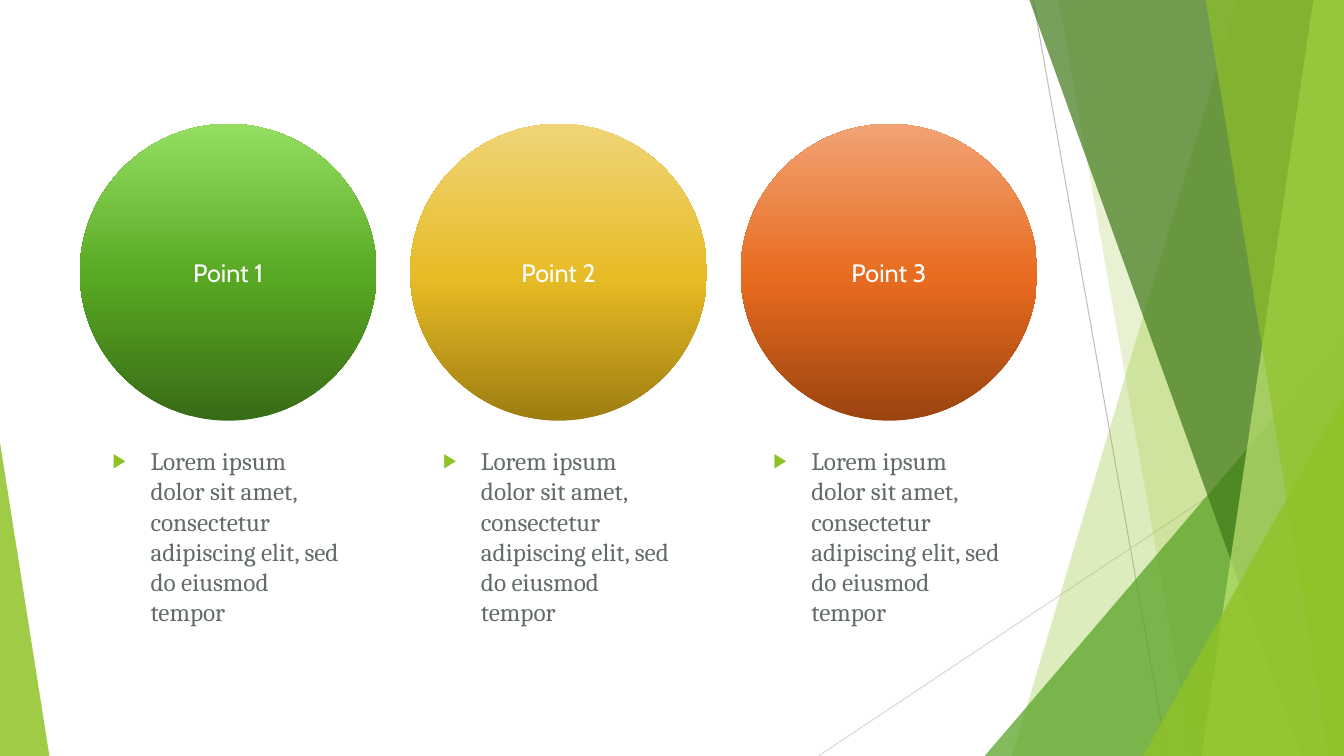
from copy import deepcopy
from dataclasses import dataclass
from pptx import Presentation
from pptx.dml.color import RGBColor
from pptx.enum.shapes import MSO_CONNECTOR, MSO_SHAPE
from pptx.enum.text import MSO_ANCHOR, MSO_AUTO_SIZE, PP_ALIGN
from pptx.oxml.ns import qn
from pptx.oxml.xmlchemy import OxmlElement
from pptx.util import Pt


@dataclass(frozen=True)
class Theme:
    lime: str = "90C226"
    pale: str = "C0E474"
    green: str = "54A021"
    forest: str = "3F7819"
    white: str = "FFFFFF"
    text: str = "646B6B"
    label_font: str = "Cabin"
    body_font: str = "Cambria"
    size: int = 18


THEME = Theme()
WIDTH, HEIGHT = 960, 540
LOREM = "Lorem ipsum dolor sit amet, consectetur adipiscing elit, sed do eiusmod tempor"
POINTS = [
    ("Point 1", LOREM, ("386B16", "58A823", "94DE61")),
    ("Point 2", LOREM, ("9D7D11", "E7BB25", "F0D578")),
    ("Point 3", LOREM, ("9B4410", "E86B1F", "F1A374")),
]
GRADIENT_STOPS = (0, 0.48, 1)
RAYS = [
    ((738, 0), (833.76, HEIGHT), "BFBFBF"),
    ((WIDTH, 290.16), (584.64, HEIGHT), "D9D9D9"),
]
FACETS = [
    ("band", (884.2, 722.9), THEME.lime, 30),
    ("band", (756, 851.8), THEME.lime, 20),
    ("corner", (703.4, 239.8, 256.6, 1), THEME.green, 72),
    ("band", (735.1, 929.5), THEME.forest, 70),
    ("band", (938.2, 858.2), THEME.pale, 70),
    ("band", (861.1, 949), THEME.lime, 65),
    ("corner", (816.5, 283, 143.5, 1), THEME.lime, 80),
    ("corner", (0, 316.1, 35.3, 0), THEME.lime, 85),
]
BAND_TOP = -0.72
CIRCLE_LEFT, CIRCLE_TOP, DIAMETER, PITCH = 57, 88.5, 212, 236
LIST_TOP, LIST_WIDTH, LIST_HEIGHT, INDENT = 314.6, 179.4, 145.6, 27
LIST_PLACEHOLDERS = (1, 2, 4)


def color(value):
    return RGBColor.from_string(value)


def add_ray(page, start, end, line_color):
    ray = page.shapes.add_connector(
        MSO_CONNECTOR.STRAIGHT, *[Pt(value) for value in (*start, *end)])
    ray.line.color.rgb = color(line_color)
    ray.line.width = Pt(0.75)
    ray._element.spPr.append(OxmlElement("a:effectLst"))


def add_facet(page, kind, geometry, fill_color, opacity):
    if kind == "band":
        top_left, bottom_left = geometry
        builder = page.shapes.build_freeform(Pt(top_left), Pt(BAND_TOP))
        corners = [(WIDTH, BAND_TOP), (WIDTH, HEIGHT), (bottom_left, HEIGHT)]
        builder.add_line_segments([(Pt(x), Pt(y)) for x, y in corners])
        facet = builder.convert_to_shape()
    else:
        left, top, width, apex = geometry
        facet = page.shapes.add_shape(
            MSO_SHAPE.ISOSCELES_TRIANGLE,
            Pt(left), Pt(top), Pt(width), Pt(HEIGHT - top))
        facet.adjustments[0] = apex
    facet.shadow.inherit = False
    facet.line.fill.background()
    facet.fill.solid()
    facet.fill.fore_color.rgb = color(fill_color)
    alpha = OxmlElement("a:alpha")
    alpha.set("val", str(opacity * 1000))
    facet._element.spPr.find(f".//{qn('a:srgbClr')}").append(alpha)


def write(shape, text, *, font, text_color, align, anchor, before=0):
    frame = shape.text_frame
    frame.word_wrap = True
    frame.auto_size = MSO_AUTO_SIZE.NONE
    frame.vertical_anchor = anchor
    para = frame.paragraphs[0]
    para.alignment = align
    para.line_spacing = 1.0
    para.space_before, para.space_after = Pt(before), Pt(0)
    span = para.add_run()
    span.text = text
    span.font.name = font
    span.font.size = Pt(THEME.size)
    span.font.bold = False
    span.font.color.rgb = color(text_color)
    return para


def add_bullet(para):
    properties = para._p.get_or_add_pPr()
    properties.set("marL", str(Pt(INDENT)))
    properties.set("indent", str(-Pt(INDENT)))
    bullet_color = OxmlElement("a:buClr")
    bullet_rgb = OxmlElement("a:srgbClr")
    bullet_rgb.set("val", THEME.lime)
    bullet_color.append(bullet_rgb)
    properties.append(bullet_color)
    for tag, name, value in (("a:buSzPct", "val", "80000"),
                             ("a:buFont", "typeface", "Wingdings 3"),
                             ("a:buChar", "char", "▶")):
        if tag == "a:buFont":
            value = "Arial"
        part = OxmlElement(tag)
        part.set(name, value)
        properties.append(part)


def add_circle(page, left, label, colors):
    circle = page.shapes.add_shape(
        MSO_SHAPE.OVAL, Pt(left), Pt(CIRCLE_TOP), Pt(DIAMETER), Pt(DIAMETER))
    circle.shadow.inherit = False
    circle.line.fill.background()
    circle.fill.gradient()
    circle.fill.gradient_angle = 90
    stop_list = circle._element.spPr.find(f".//{qn('a:gsLst')}")
    stop_list.append(deepcopy(stop_list[-1]))
    for stop, position, value in zip(circle.fill.gradient_stops, GRADIENT_STOPS, colors):
        stop.position = position
        stop.color.rgb = color(value)
    write(circle, label, font=THEME.label_font, text_color=THEME.white,
          align=PP_ALIGN.CENTER, anchor=MSO_ANCHOR.MIDDLE)


def place_list(box, left, text):
    box.left, box.top = Pt(left), Pt(LIST_TOP)
    box.width, box.height = Pt(LIST_WIDTH), Pt(LIST_HEIGHT)
    para = write(box, text, font=THEME.body_font, text_color=THEME.text,
                 align=PP_ALIGN.LEFT, anchor=MSO_ANCHOR.TOP, before=10)
    add_bullet(para)


def main():
    deck = Presentation()
    deck.slide_width, deck.slide_height = Pt(WIDTH), Pt(HEIGHT)
    page = deck.slides.add_slide(deck.slide_layouts.get_by_name("Comparison"))
    boxes = {box.placeholder_format.idx: box for box in page.placeholders}
    for index, box in boxes.items():
        if index not in LIST_PLACEHOLDERS:
            box._element.getparent().remove(box._element)
    for ray in RAYS:
        add_ray(page, *ray)
    for facet in FACETS:
        add_facet(page, *facet)
    for column, (label, text, colors) in enumerate(POINTS):
        left = CIRCLE_LEFT + column * PITCH
        add_circle(page, left, label, colors)
        place_list(boxes[LIST_PLACEHOLDERS[column]],
                   left + (DIAMETER - LIST_WIDTH) / 2, text)
    deck.save("out.pptx")


if __name__ == "__main__":
    main()
